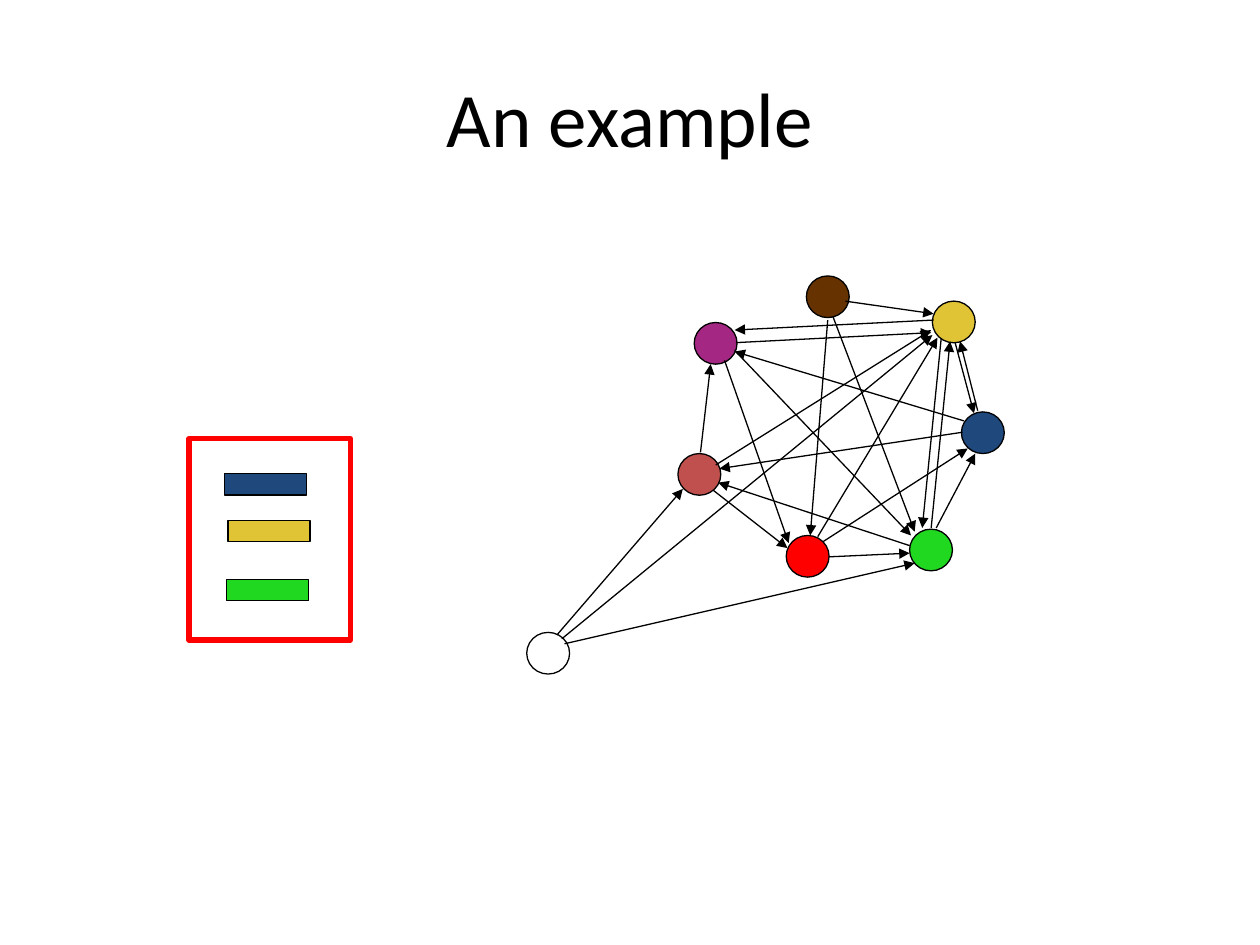
"""Draw a slide with a directed graph of coloured nodes and a boxed key."""
from dataclasses import dataclass

from lxml import etree
from pptx import Presentation
from pptx import util as u
from pptx.dml.color import RGBColor
from pptx.enum import shapes, text
from pptx.oxml import ns

Pt = u.Pt


@dataclass(frozen=True)
class Theme:
    font: str = "Calibri"
    title: float = 44
    thin: float = 0.75
    thick: float = 3
    black: str = "000000"
    red: str = "FF0000"
    purple: str = "A52784"
    brown: str = "663300"
    blue: str = "1F497D"
    rose: str = "C0504D"
    green: str = "20D820"
    gold: str = "E1C435"


THEME = Theme()
NODE = (24.5, 23.8)
BAR = (46.8, 12.2)

NODES = [
    (396.7, 184.3, THEME.purple),
    (460.8, 157.7, THEME.brown),
    (549.4, 235.4, THEME.blue),
    (387.4, 259.2, THEME.rose),
    (519.8, 302.4, THEME.green),
    (449.3, 306, THEME.red),
    (532.8, 172.1, THEME.gold),
    (301, 361.4, None),
]

BARS = [
    (128.2, 270.7, THEME.blue),
    (130.3, 297.4, THEME.gold),
    (129.6, 331.2, THEME.green),
]

ARROWS = {
    "brown": [
        (473, 182.9, 463, 306),
        (475.9, 180.7, 522.7, 303.8),
        (483.1, 172.1, 533.5, 179.3),
    ],
    "rose": [
        (409, 265.7, 532.1, 188.6),
        (407.5, 280.1, 450, 313.2),
        (400.3, 258.5, 406.1, 208.1),
    ],
    "purple": [
        (414, 205.9, 450.7, 310.3),
        (420.5, 195.8, 532.1, 190.1),
        (419.8, 200.2, 520.6, 306),
    ],
    "red": [
        (473.8, 318.2, 519.8, 316.1),
        (470.2, 309.6, 553, 256.3),
        (467.3, 306.7, 535.7, 193),
    ],
    "green": [
        (535, 301.7, 557.3, 259.2),
        (532.1, 301.7, 542.9, 195.1),
        (519.8, 311.8, 410.4, 275.8),
    ],
    "blue": [
        (558.7, 234.7, 548.6, 195.1),
        (550.1, 247, 411.1, 267.8),
        (550.8, 240.5, 419.8, 200.9),
    ],
    "gold": [
        (533.5, 182.9, 419.8, 188.6),
        (545.8, 195.8, 556.6, 236.2),
        (537.8, 193.7, 527, 301.7),
    ],
    "white": [
        (318.2, 362.9, 390.2, 279.4),
        (321.1, 365, 532.8, 191.5),
        (322.6, 367.9, 522.7, 321.8),
    ],
}


def rgb(code):
    return RGBColor.from_string(code)


def stroke(line, code, width):
    line.color.rgb = rgb(code)
    line.width = Pt(width)


def title(slide, words):
    box = slide.shapes.add_textbox(Pt(36), Pt(21.6), Pt(648), Pt(90))
    frame = box.text_frame
    frame.word_wrap = True
    frame.vertical_anchor = text.MSO_ANCHOR.MIDDLE
    para = frame.paragraphs[0]
    para.alignment = text.PP_ALIGN.CENTER
    run = para.add_run()
    run.text = words
    run.font.name = THEME.font
    run.font.size = Pt(THEME.title)
    run.font.color.rgb = rgb(THEME.black)


def shape(slide, kind, spot, size, fill=None, edge=THEME.black, width=THEME.thin):
    item = slide.shapes.add_shape(kind, *map(Pt, spot + size))
    item.shadow.inherit = False
    if fill:
        item.fill.solid()
        item.fill.fore_color.rgb = rgb(fill)
    else:
        item.fill.background()
    stroke(item.line, edge, width)


def arrow(slide, ends):
    link = slide.shapes.add_connector(shapes.MSO_CONNECTOR.STRAIGHT, *map(Pt, ends))
    stroke(link.line, THEME.black, THEME.thin)
    line = link.line._get_or_add_ln()
    etree.SubElement(line, ns.qn("a:tailEnd"), type="triangle")
    etree.SubElement(link._element.spPr, ns.qn("a:effectLst"))


def main():
    deck = Presentation()
    deck.slide_width, deck.slide_height = Pt(720), Pt(540)
    slide = deck.slides.add_slide(deck.slide_layouts[6])
    oval, rect = shapes.MSO_SHAPE.OVAL, shapes.MSO_SHAPE.RECTANGLE
    title(slide, "An example")
    for left, top, fill in NODES:
        shape(slide, oval, (left, top), NODE, fill)
    for group in ARROWS.values():
        for ends in group:
            arrow(slide, ends)
    shape(slide, rect, (108, 250.6), (92.2, 115.2), edge=THEME.red, width=THEME.thick)
    for left, top, fill in BARS:
        shape(slide, rect, (left, top), BAR, fill)
    deck.save("out.pptx")


if __name__ == "__main__":
    main()
